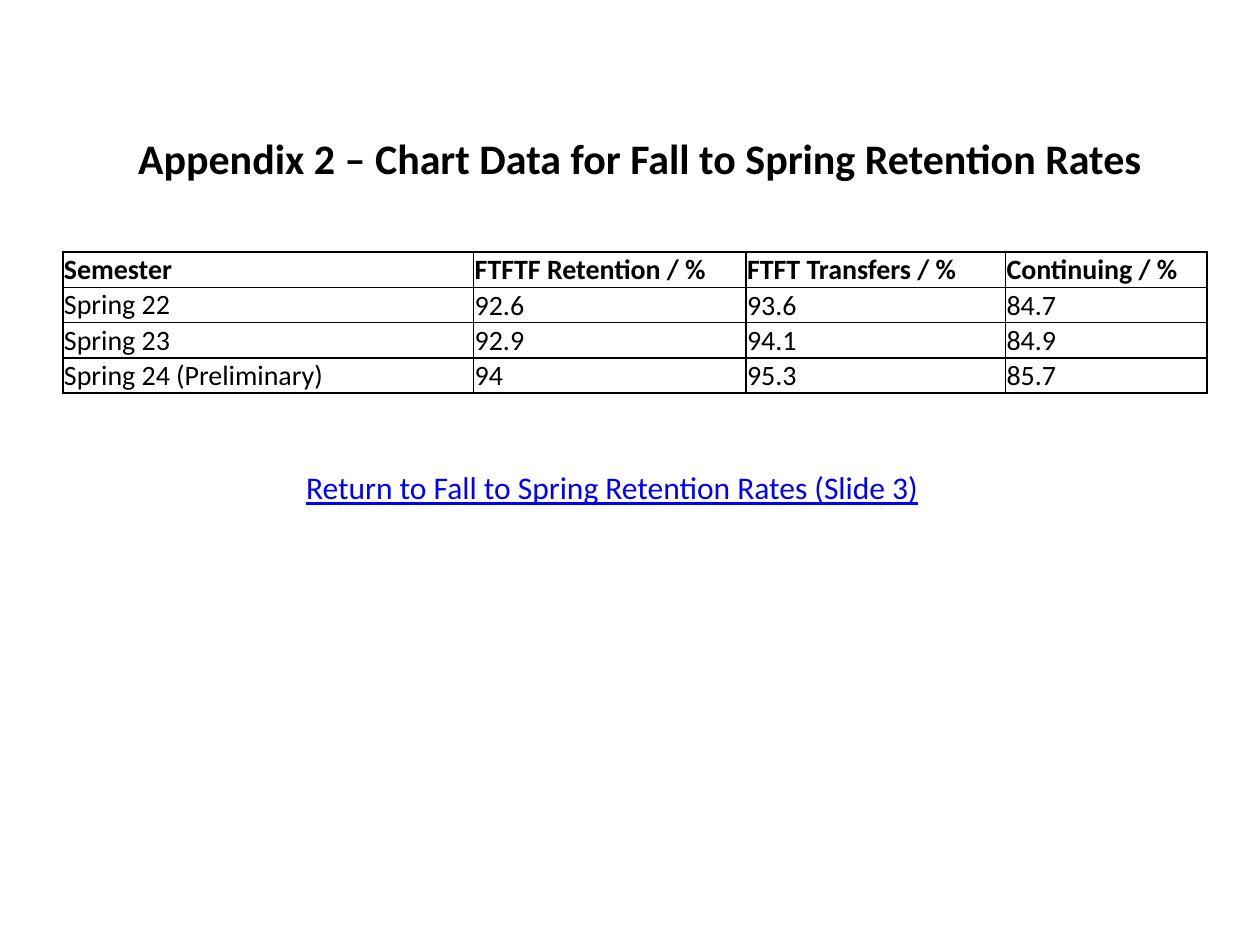
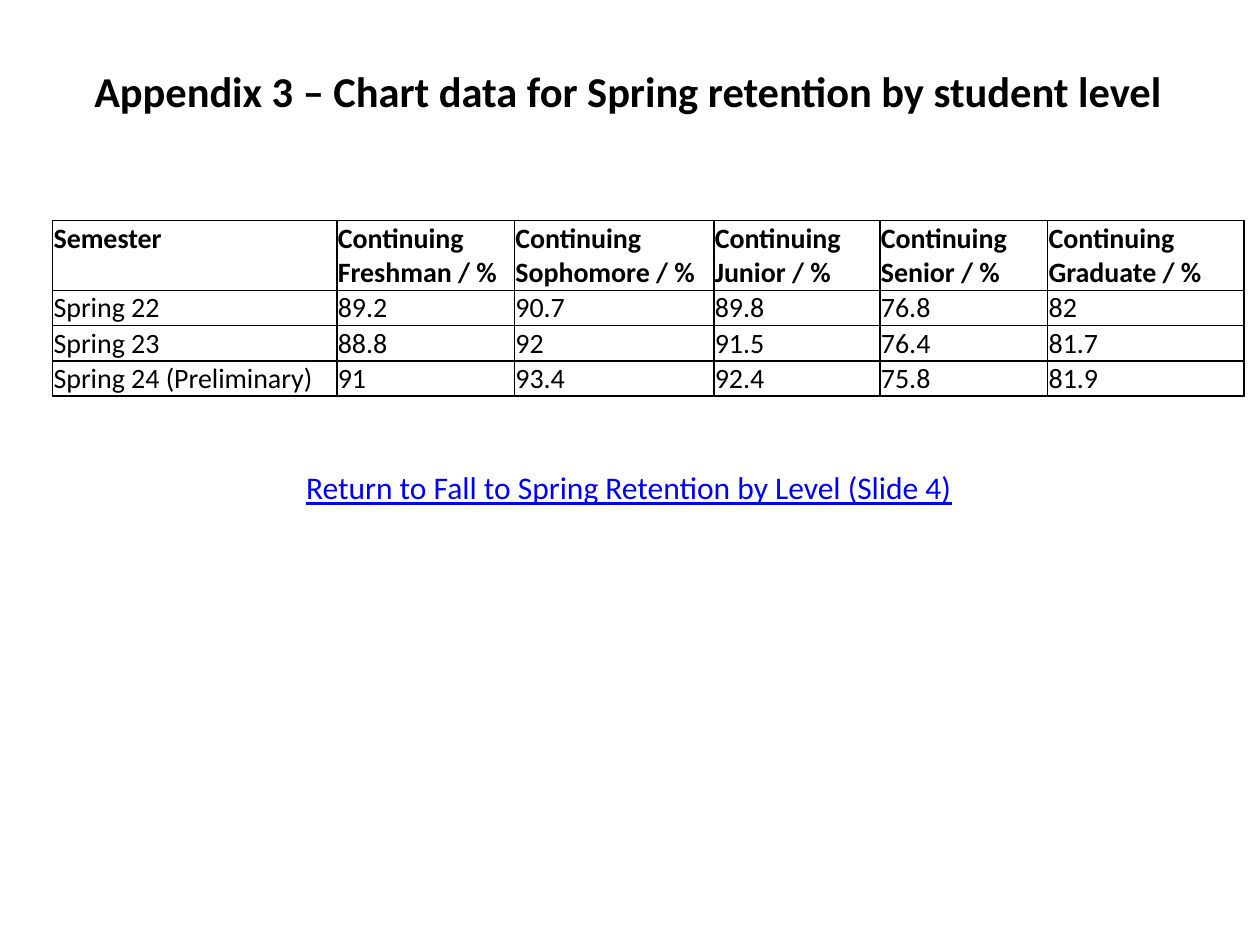
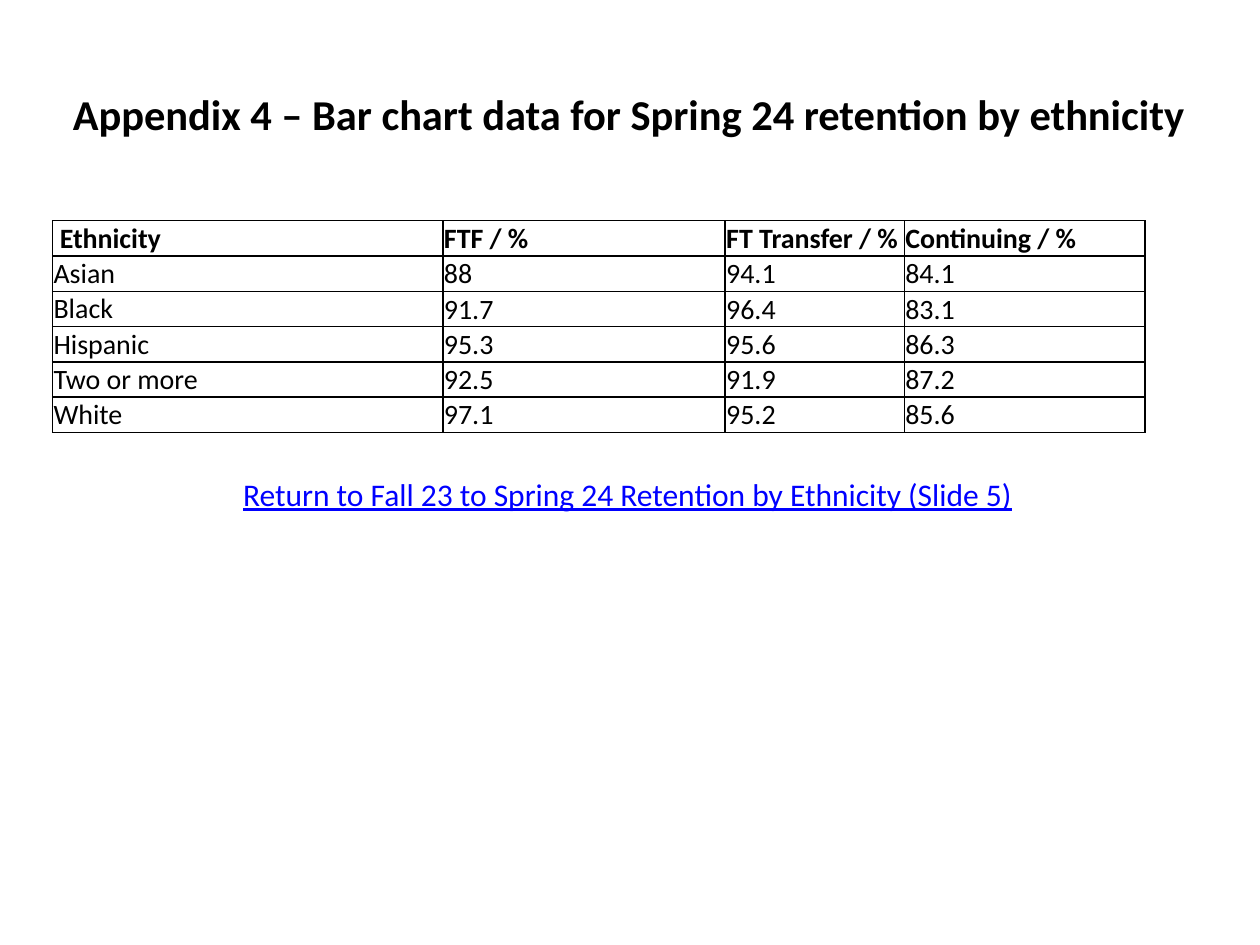
from lxml import etree
from pptx import Presentation
from pptx import util as u
from pptx.dml.color import RGBColor
from pptx.enum import text
from pptx.oxml.ns import qn

FONT = "Calibri"
HEX = {"ink": "000000", "link": "0000FF"}
ROW = 0.7  # height of a one-line row, cm

# Title: (left, top, size, alignment); head: height of the header row
pages = [
    dict(title="Appendix 2 – Chart Data for Fall to Spring Retention Rates",
         place=(1.47, 2.01, 24, text.PP_ALIGN.CENTER),
         spot=(1.27, 5.08), cols=[8.28, 5.49, 5.23, 4.06], head=ROW,
         rows=[["Semester", "FTFTF Retention / %", "FTFT Transfers / %", "Continuing / %"],
               ["Spring 22", "92.6", "93.6", "84.7"],
               ["Spring 23", "92.9", "94.1", "84.9"],
               ["Spring 24 (Preliminary)", "94", "95.3", "85.7"]],
         link="Return to Fall to Spring Retention Rates (Slide 3)", at=(5.92, 9.32)),
    dict(title="Appendix 3 – Chart data for Spring retention by student level",
         place=(1.9, 0.66, 24.3, text.PP_ALIGN.LEFT),
         spot=(1.06, 4.45), cols=[5.73, 3.58, 4.02, 3.35, 3.38, 3.96], head=1.37,
         rows=[["Semester", "Continuing Freshman / %", "Continuing Sophomore / %",
                "Continuing Junior / %", "Continuing Senior / %", "Continuing Graduate / %"],
               ["Spring 22", "89.2", "90.7", "89.8", "76.8", "82"],
               ["Spring 23", "88.8", "92", "91.5", "76.4", "81.7"],
               ["Spring 24 (Preliminary)", "91", "93.4", "92.4", "75.8", "81.9"]],
         link="Return to Fall to Spring Retention by Level (Slide 4)", at=(5.92, 9.32)),
    dict(title="Appendix 4 – Bar chart data for Spring 24 retention by ethnicity",
         place=(1.47, 1.12, 24.3, text.PP_ALIGN.LEFT),
         spot=(1.06, 4.45), cols=[7.87, 5.69, 3.61, 4.85], head=ROW,
         rows=[[" Ethnicity", "FTF / %", "FT Transfer / %", "Continuing / %"],
               ["Asian", "88", "94.1", "84.1"],
               ["Black", "91.7", "96.4", "83.1"],
               ["Hispanic", "95.3", "95.6", "86.3"],
               ["Two or more", "92.5", "91.9", "87.2"],
               ["White", "97.1", "95.2", "85.6"]],
         link="Return to Fall 23 to Spring 24 Retention by Ethnicity (Slide 5)", at=(4.65, 9.45)),
]


def style(frame, size, color="ink", bold=False, line=False):
    for run in frame.paragraphs[0].runs:
        font = run.font
        font.name, font.size = FONT, u.Pt(size)
        font.bold, font.underline = bold, line
        font.color.rgb = RGBColor.from_string(HEX[color])


def border(cell):
    props = cell._tc.get_or_add_tcPr()
    for i, side in enumerate(("lnL", "lnR", "lnT", "lnB")):
        edge = etree.Element(qn("a:" + side), w=str(u.Pt(1)))
        fill = etree.SubElement(edge, qn("a:solidFill"))
        etree.SubElement(fill, qn("a:srgbClr"), val=HEX["ink"])
        props.insert(i, edge)


deck = Presentation()
deck.slide_width, deck.slide_height = u.Cm(25.4), u.Cm(19.05)

for page in pages:
    slide = deck.slides.add_slide(deck.slide_layouts[5])

    # Title
    left, top, size, align = page["place"]
    title = slide.shapes.title
    title.left, title.top = u.Cm(left), u.Cm(top)
    title.width, title.height = u.Cm(22.86), u.Cm(2.34)
    frame = title.text_frame
    frame.text = page["title"]
    frame.margin_left = frame.margin_right = 0
    frame.vertical_anchor = text.MSO_ANCHOR.MIDDLE
    frame.auto_size = text.MSO_AUTO_SIZE.NONE
    frame.paragraphs[0].alignment = align
    style(frame, size, bold=True)

    # Table
    rows, cols = page["rows"], page["cols"]
    x, y = page["spot"]
    high = page["head"] + ROW * (len(rows) - 1)
    table = slide.shapes.add_table(len(rows), len(cols), u.Cm(x), u.Cm(y),
                                   u.Cm(sum(cols)), u.Cm(high)).table
    table.horz_banding = False
    for col, wide in zip(table.columns, cols):
        col.width = u.Cm(wide)
    for r, row in enumerate(rows):
        table.rows[r].height = u.Cm(ROW if r else page["head"])
        for c, value in enumerate(row):
            cell = table.cell(r, c)
            cell.text = value
            cell.margin_left = cell.margin_right = cell.margin_top = u.Cm(0.02)
            cell.margin_bottom = 0
            cell.vertical_anchor = text.MSO_ANCHOR.BOTTOM if r and c else text.MSO_ANCHOR.TOP
            cell.fill.background()
            border(cell)
            style(cell.text_frame, 16, bold=r == 0)

    # Return line
    x, y = page["at"]
    box = slide.shapes.add_textbox(u.Cm(x), u.Cm(y), u.Cm(19.89), u.Cm(1.07))
    frame = box.text_frame
    frame.word_wrap = True
    frame.text = page["link"]
    style(frame, 18, "link", line=True)

deck.save("out.pptx")
